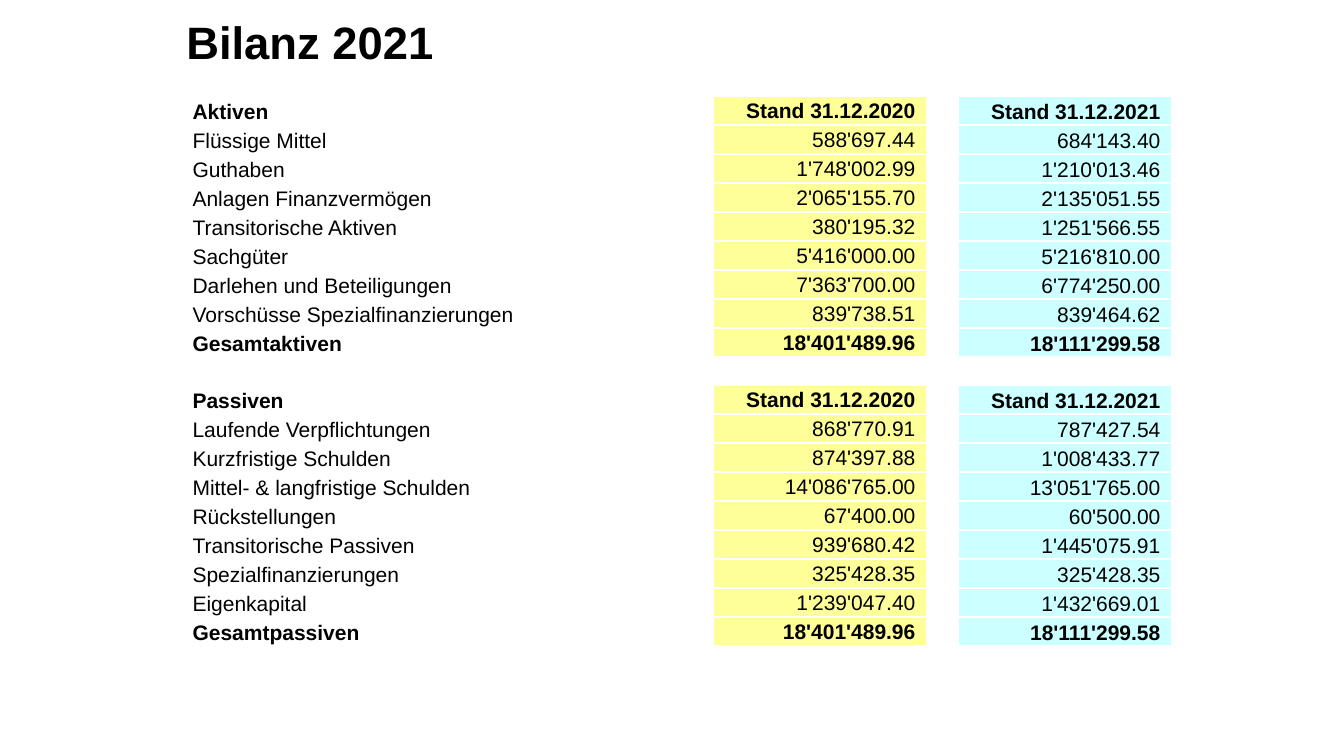
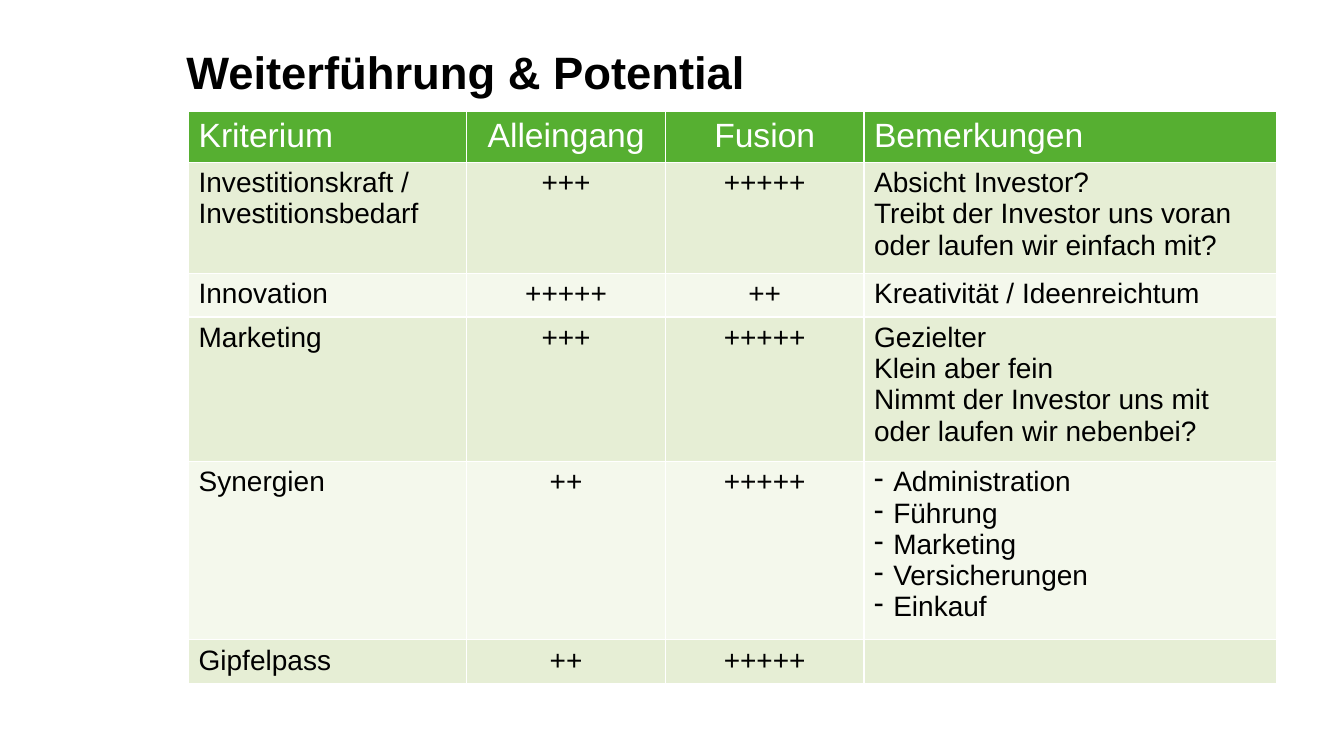
from lxml.etree import SubElement
from pptx import Presentation
from pptx.dml.color import RGBColor
from pptx.enum.text import MSO_ANCHOR as Anchor, PP_ALIGN as Align
from pptx.oxml.ns import qn
from pptx.util import Inches, Pt

FONT = "Arial"
COLORS = {
    "text": "000000",
    "white": "FFFFFF",
    "year_2020": "FFFF99",
    "year_2021": "CCFFFF",
    "header": "56AF31",
    "band_dark": "E6EED5",
    "band_light": "F4F8EC",
}

STAND = ("Stand 31.12.2020", "Stand 31.12.2021")
ASSETS = [
    ("Aktiven", *STAND),
    ("Flüssige Mittel", "588'697.44", "684'143.40"),
    ("Guthaben", "1'748'002.99", "1'210'013.46"),
    ("Anlagen Finanzvermögen", "2'065'155.70", "2'135'051.55"),
    ("Transitorische Aktiven", "380'195.32", "1'251'566.55"),
    ("Sachgüter", "5'416'000.00", "5'216'810.00"),
    ("Darlehen und Beteiligungen", "7'363'700.00", "6'774'250.00"),
    ("Vorschüsse Spezialfinanzierungen", "839'738.51", "839'464.62"),
    ("Gesamtaktiven", "18'401'489.96", "18'111'299.58"),
]
LIABILITIES = [
    ("Passiven", *STAND),
    ("Laufende Verpflichtungen", "868'770.91", "787'427.54"),
    ("Kurzfristige Schulden", "874'397.88", "1'008'433.77"),
    ("Mittel- & langfristige Schulden", "14'086'765.00", "13'051'765.00"),
    ("Rückstellungen", "67'400.00", "60'500.00"),
    ("Transitorische Passiven", "939'680.42", "1'445'075.91"),
    ("Spezialfinanzierungen", "325'428.35", "325'428.35"),
    ("Eigenkapital", "1'239'047.40", "1'432'669.01"),
    ("Gesamtpassiven", "18'401'489.96", "18'111'299.58"),
]
BALANCE_COLS = [5.27, 2.12, 0.31, 2.12]
BALANCE_HEIGHT = 5.28

CRITERIA_HEADER = ("Kriterium", "Alleingang", "Fusion", "Bemerkungen")
CRITERIA = [
    ("Investitionskraft / Investitionsbedarf", 3, 5,
     ["Absicht Investor?",
      "Treibt der Investor uns voran oder laufen wir einfach mit?"]),
    ("Innovation", 5, 2, ["Kreativität / Ideenreichtum"]),
    ("Marketing", 3, 5,
     ["Gezielter", "Klein aber fein",
      "Nimmt der Investor uns mit oder laufen wir nebenbei?"]),
    ("Synergien", 2, 5,
     ["Administration", "Führung", "Marketing", "Versicherungen", "Einkauf"]),
    ("Gipfelpass", 2, 5, [""]),
]
BULLETED = "Synergien"
CRITERIA_COLS = [2.76, 1.97, 1.97, 4.09]
CRITERIA_LINES = [3, 1, 4, 5, 1]
HEADER_HEIGHT, LINE_HEIGHT, CELL_PADDING = 0.47, 0.31, 0.1


def rgb(name):
    return RGBColor.from_string(COLORS[name])


def write(tf, lines, size=20, bold=False, color="text", align=Align.LEFT,
          spacing=None, bullet=None):
    for i, line in enumerate([lines] if isinstance(lines, str) else lines):
        p = tf.add_paragraph() if i else tf.paragraphs[0]
        p.alignment = align
        if spacing:
            p.line_spacing = spacing
        if bullet:
            pPr = p._p.get_or_add_pPr()
            pPr.set("marL", str(Inches(0.19)))
            pPr.set("indent", str(-Inches(0.19)))
            SubElement(pPr, qn("a:buChar"), char=bullet)
        if not line:
            SubElement(p._p, qn("a:endParaRPr"), sz=str(size * 100))
            continue
        r = p.add_run()
        r.text = line
        r.font.name, r.font.size, r.font.bold = FONT, Pt(size), bold
        r.font.color.rgb = rgb(color)


def add_titled_slide(prs, title, top):
    s = prs.slides.add_slide(prs.slide_layouts[6])
    sp = s.shapes.add_textbox(Inches(1.75), Inches(top), Inches(11.14), Inches(0.59))
    tf = sp.text_frame
    tf.word_wrap = True
    tf.vertical_anchor = Anchor.MIDDLE
    write(tf, title, size=32.4, bold=True, spacing=0.9)
    return s


def add_plain_table(s, left, top, cols, rows):
    table = s.shapes.add_table(len(rows), len(cols), Inches(left), Inches(top),
                               Inches(sum(cols)), Inches(sum(rows))).table
    table.first_row = table.horz_banding = False
    for col, width in zip(table.columns, cols):
        col.width = Inches(width)
    for row, height in zip(table.rows, rows):
        row.height = Inches(height)
    return table


def style_cell(cell, fill, border, inset_x, inset_y, anchor=Anchor.TOP):
    tcPr = cell._tc.get_or_add_tcPr()
    for side in "LRTB":
        ln = SubElement(tcPr, qn(f"a:ln{side}"), w=str(Pt(border)))
        SubElement(SubElement(ln, qn("a:solidFill")), qn("a:srgbClr"), val=COLORS["white"])
    if fill:
        cell.fill.solid()
        cell.fill.fore_color.rgb = rgb(fill)
    else:
        cell.fill.background()
    cell.margin_left = cell.margin_right = Inches(inset_x)
    cell.margin_top = cell.margin_bottom = Inches(inset_y)
    cell.vertical_anchor = anchor


def build_balance(prs):
    s = add_titled_slide(prs, "Bilanz 2021", 0.15)
    rows = ASSETS + [("", "", "")] + LIABILITIES
    bold_rows = {rows.index(group[i]) for group in (ASSETS, LIABILITIES) for i in (0, -1)}
    table = add_plain_table(s, 1.8, 0.95, BALANCE_COLS,
                            [BALANCE_HEIGHT / len(rows)] * len(rows))
    fills = (None, "year_2020", None, "year_2021")
    anchors = (Anchor.MIDDLE, Anchor.TOP, Anchor.MIDDLE, Anchor.MIDDLE)
    for i, (label, before, after) in enumerate(rows):
        for j, text in enumerate((label, before, "", after)):
            cell = table.cell(i, j)
            style_cell(cell, fills[j] if label else None, 1.5, 0.11, 0, anchors[j])
            write(cell.text_frame, text, size=15, bold=i in bold_rows, spacing=1.15,
                  align=Align.RIGHT if j else Align.LEFT)


def build_criteria(prs):
    s = add_titled_slide(prs, "Weiterführung & Potential", 0.45)
    heights = [HEADER_HEIGHT] + [n * LINE_HEIGHT + CELL_PADDING for n in CRITERIA_LINES]
    table = add_plain_table(s, 1.87, 1.11, CRITERIA_COLS, heights)
    rows = [CRITERIA_HEADER] + [(name, "+" * alone, "+" * merged, notes)
                                for name, alone, merged, notes in CRITERIA]
    for i, row in enumerate(rows):
        fill = ("band_dark" if i % 2 else "band_light") if i else "header"
        for j, text in enumerate(row):
            cell = table.cell(i, j)
            style_cell(cell, fill, 1, 0.1, 0.05)
            write(cell.text_frame, text, size=20 if i else 24,
                  color="text" if i else "white",
                  align=Align.CENTER if j in (1, 2) else Align.LEFT,
                  bullet="-" if row[0] == BULLETED and j == 3 else None)


def main():
    prs = Presentation()
    prs.slide_width, prs.slide_height = Inches(13.33), Inches(7.5)
    build_balance(prs)
    build_criteria(prs)
    prs.save("out.pptx")


if __name__ == "__main__":
    main()
